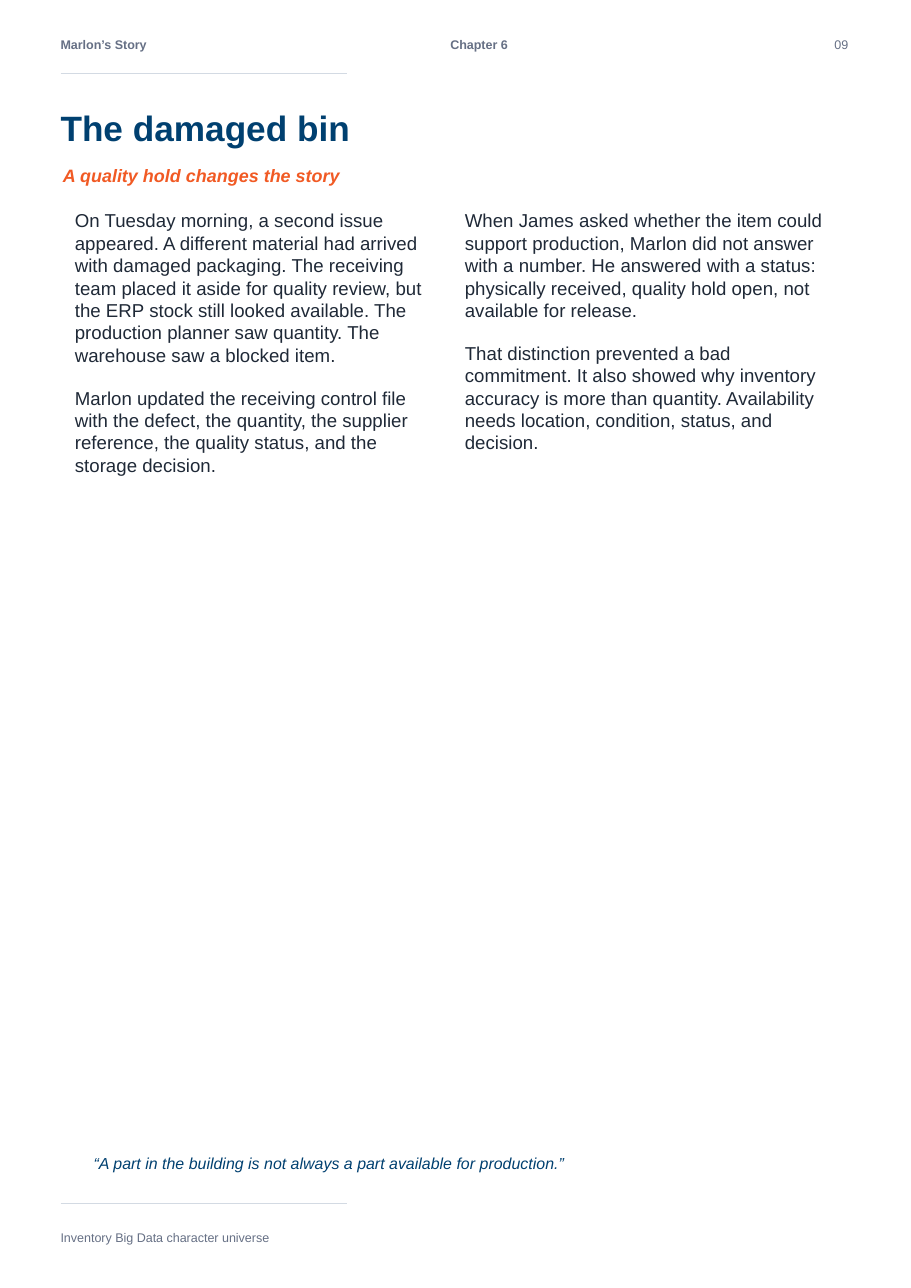
from dataclasses import dataclass

from lxml.etree import SubElement
from pptx import Presentation
from pptx.dml.color import RGBColor
from pptx.enum.shapes import MSO_CONNECTOR
from pptx.enum.text import MSO_ANCHOR, MSO_AUTO_SIZE, PP_ALIGN
from pptx.oxml.ns import qn
from pptx.shapes.base import BaseShape
from pptx.slide import Slide
from pptx.util import Emu, Pt

EMU_PER_PX = 9144  # 100 px to the inch
FONT = "Arial"
GREY, NAVY, ORANGE, INK, RULE = "667085", "004070", "F15A24", "1F2937", "D3DAE3"
PARAGRAPH_GAP = 13.4
RULE_LEFT, RULE_RIGHT = 55, 315


@dataclass(frozen=True)
class TextBlock:
    left: int
    top: int
    width: int
    height: int
    paragraphs: tuple[str, ...]
    size: float
    color: str
    bold: bool = False
    italic: bool = False
    align: PP_ALIGN = PP_ALIGN.LEFT
    anchor: MSO_ANCHOR = MSO_ANCHOR.MIDDLE
    side_inset: int = 0


def label(left: int, top: int, width: int, text: str, bold: bool = False,
          align: PP_ALIGN = PP_ALIGN.LEFT) -> TextBlock:
    """Small grey text of the page header and footer."""
    return TextBlock(left, top, width, 18, (text,), 8.2, GREY, bold, align=align)


def column(left: int, *paragraphs: str) -> TextBlock:
    """One of the two body columns."""
    return TextBlock(left, 190, 340, 510, paragraphs, 12.2, INK,
                     anchor=MSO_ANCHOR.TOP, side_inset=2)


TITLE = TextBlock(55, 95, 715, 42, ("The damaged bin",), 23, NAVY, bold=True)

BLOCKS = (
    label(55, 31, 190, "Marlon’s Story", bold=True),
    label(295, 31, 280, "Chapter 6", bold=True, align=PP_ALIGN.CENTER),
    label(725, 31, 45, "09", align=PP_ALIGN.RIGHT),
    label(55, 1114, 300, "Inventory Big Data character universe"),
    TextBlock(57, 147, 700, 24, ("A quality hold changes the story",),
              11.7, ORANGE, bold=True, italic=True),
    column(
        66,
        "On Tuesday morning, a second issue appeared. A different material had "
        "arrived with damaged packaging. The receiving team placed it aside for "
        "quality review, but the ERP stock still looked available. The production "
        "planner saw quantity. The warehouse saw a blocked item.",
        "Marlon updated the receiving control file with the defect, the quantity, "
        "the supplier reference, the quality status, and the storage decision.",
    ),
    column(
        420,
        "When James asked whether the item could support production, Marlon did "
        "not answer with a number. He answered with a status: physically received, "
        "quality hold open, not available for release.",
        "That distinction prevented a bad commitment. It also showed why inventory "
        "accuracy is more than quantity. Availability needs location, condition, "
        "status, and decision.",
    ),
    TextBlock(85, 1033, 665, 45,
              ("“A part in the building is not always a part available for production.”",),
              10.4, NAVY, italic=True),
)


def px(length: int) -> Emu:
    return Emu(length * EMU_PER_PX)


def rgb(color: str) -> RGBColor:
    return RGBColor.from_string(color)


def fill_text(box: BaseShape, block: TextBlock) -> None:
    frame = box.text_frame
    frame.word_wrap = True
    frame.auto_size = MSO_AUTO_SIZE.NONE
    frame.vertical_anchor = block.anchor
    frame.margin_left = frame.margin_right = px(block.side_inset)
    frame.margin_top = frame.margin_bottom = 0
    frame.text = "\n".join(block.paragraphs)
    for index, para in enumerate(frame.paragraphs):
        para.alignment = block.align
        para.space_before = Pt(PARAGRAPH_GAP if index else 0)
        for span in para.runs:
            font = span.font
            font.name, font.size = FONT, Pt(block.size)
            font.bold, font.italic = block.bold, block.italic
            font.color.rgb = rgb(block.color)


def add_text(page: Slide, block: TextBlock) -> None:
    box = page.shapes.add_textbox(
        px(block.left), px(block.top), px(block.width), px(block.height))
    fill_text(box, block)


def place_title(page: Slide, block: TextBlock) -> None:
    title = page.shapes.title
    title.left, title.top = px(block.left), px(block.top)
    title.width, title.height = px(block.width), px(block.height)
    fill_text(title, block)


def add_rule(page: Slide, top: int) -> None:
    rule = page.shapes.add_connector(
        MSO_CONNECTOR.STRAIGHT, px(RULE_LEFT), px(top), px(RULE_RIGHT), px(top))
    rule.line.color.rgb = rgb(RULE)
    rule.line.width = Pt(0.8)
    SubElement(rule._element.spPr, qn("a:effectLst"))


def main() -> None:
    deck = Presentation()
    deck.slide_width, deck.slide_height = px(827), px(1169)
    page = deck.slides.add_slide(deck.slide_layouts[5])
    place_title(page, TITLE)
    for block in BLOCKS:
        add_text(page, block)
    for top in (67, 1092):
        add_rule(page, top)
    deck.save("out.pptx")


if __name__ == "__main__":
    main()
